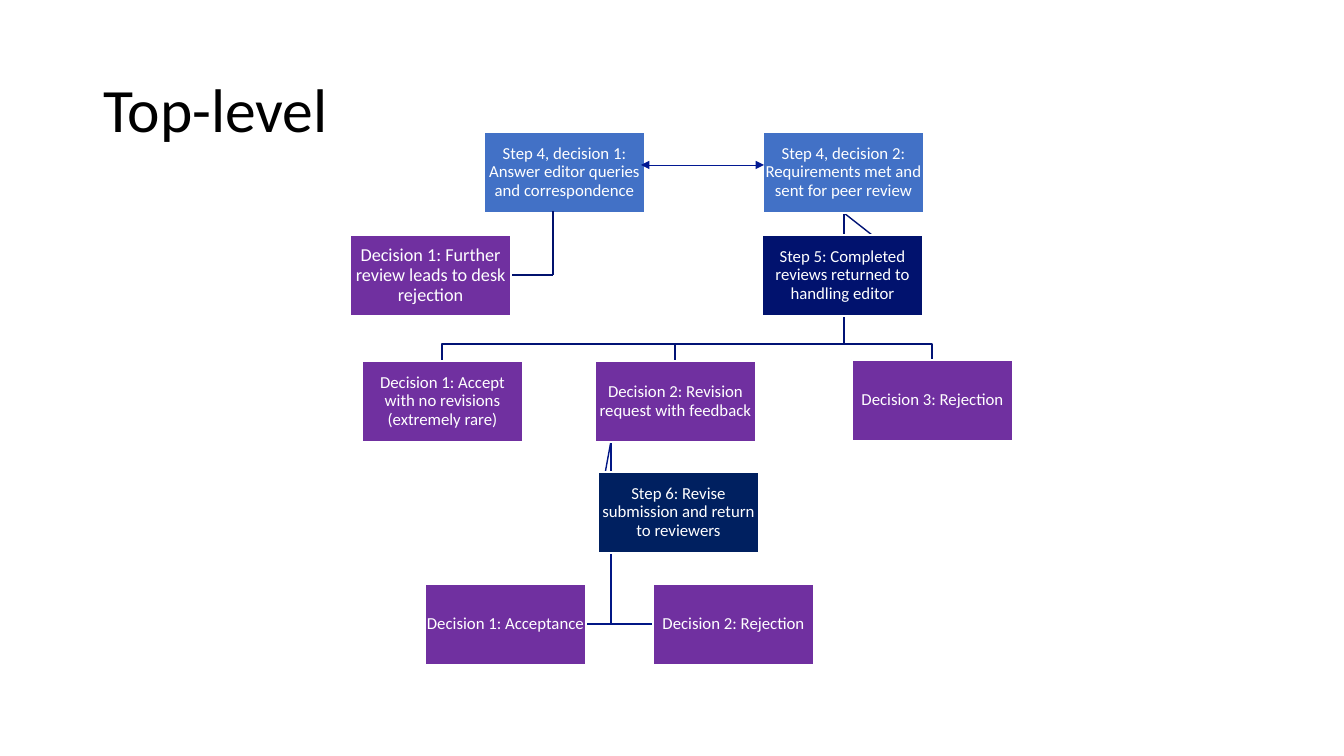
"""Build the top-level flowchart slide of editorial decisions."""
from lxml import etree
from pptx import Presentation
from pptx.dml.color import RGBColor
from pptx.enum.shapes import MSO_CONNECTOR, MSO_SHAPE
from pptx.enum.text import MSO_ANCHOR, PP_ALIGN
from pptx.oxml.ns import qn
from pptx.util import Pt

STRAIGHT, RECTANGLE = MSO_CONNECTOR.STRAIGHT, MSO_SHAPE.RECTANGLE
MIDDLE, LEFT, CENTER = MSO_ANCHOR.MIDDLE, PP_ALIGN.LEFT, PP_ALIGN.CENTER

EMU_PER_PX = 914400 / 100.8
SLIDE_SIZE = 1344, 756
BOX_SIZE = 161, 81
FONT = "Calibri"
BLUE, PURPLE, NAVY, MIDNIGHT = "4271C6", "7030A0", "01126E", "002060"
WHITE, BLACK = "FFFFFF", "000000"
REVIEW_LINE, REVISION_LINE, QUERY_LINE = "011375", "011685", "011892"

TITLE = "Top-level"
TITLE_FRAME = 93, 40, 1159, 146

REVIEW_START, REVIEW_BUS = (844, 213), 344
REVIEW_ENDS = [(675, 361), (442, 361), (932, 360)]
REVISION_START, REVISION_BUS = (611, 441), 624
REVISION_ENDS = [587, 653]
STEP_LINKS = [
    (REVIEW_START, (923, 275), REVIEW_LINE),
    (REVISION_START, (598, 512), REVISION_LINE),
]
DESK_LINKS = [
    ((553, 211), (553, 275), NAVY),
    ((453, 275), (553, 275), NAVY),
]
QUERY_LINK = (641, 165), (764, 165), QUERY_LINE

STEPS = [
    ("Step 4, decision 2: Requirements met and sent for peer review", 763, 132, BLUE),
    ("Decision 3: Rejection", 852, 360, PURPLE),
    ("Decision 1: Accept with no revisions (extremely rare)", 362, 361, PURPLE),
    ("Decision 2: Revision request with feedback", 595, 361, PURPLE),
    ("Step 6: Revise submission and return to reviewers", 598, 472, MIDNIGHT),
    ("Decision 2: Rejection", 653, 584, PURPLE),
    ("Decision 1: Acceptance", 425, 584, PURPLE),
    ("Step 5: Completed reviews returned to handling editor", 762, 235, NAVY),
    ("Step 4, decision 1: Answer editor queries and correspondence", 484, 132, BLUE),
]
DESK_REJECTION = "Decision 1: Further review leads to desk rejection", 350, 235, PURPLE


def emu(*lengths):
    return [round(length * EMU_PER_PX) for length in lengths]


def rgb(value):
    return RGBColor.from_string(value)


def apply(target, formats):
    for name, value in formats.items():
        setattr(target, name, value)


def write(frame, wording, size, color, align):
    apply(frame, {"text": wording, "word_wrap": True, "vertical_anchor": MIDDLE})
    paragraph = frame.paragraphs[0]
    apply(paragraph, {"alignment": align, "line_spacing": 0.9})
    font = paragraph.runs[0].font
    apply(font, {"name": FONT, "size": Pt(size), "bold": False})
    font.color.rgb = rgb(color)


def stroke(line, color, weight=1):
    line.color.rgb = rgb(color)
    line.width = Pt(weight)


def add_box(shapes, wording, left, top, fill, size=12):
    box = shapes.add_shape(RECTANGLE, *emu(left, top, *BOX_SIZE))
    box.shadow.inherit = False
    box.fill.solid()
    box.fill.fore_color.rgb = rgb(fill)
    stroke(box.line, WHITE)
    inset = emu(1)[0]
    sides = ("left", "right", "top", "bottom")
    apply(box.text_frame, {f"margin_{side}": inset for side in sides})
    write(box.text_frame, wording, size, WHITE, CENTER)


def add_branch(shapes, points, color):
    builder = shapes.build_freeform(*points[0], scale=EMU_PER_PX)
    builder.add_line_segments(points[1:], close=False)
    branch = builder.convert_to_shape()
    branch.shadow.inherit = False
    branch.fill.background()
    stroke(branch.line, color)


def add_link(shapes, start, end, color, weight=1, arrows=()):
    link = shapes.add_connector(STRAIGHT, *emu(*start, *end))
    stroke(link.line, color, weight)
    properties = link._element.spPr
    for arrow in arrows:
        etree.SubElement(properties.find(qn("a:ln")), qn(arrow), type="triangle")
    etree.SubElement(properties, qn("a:effectLst"))


def main():
    deck = Presentation()
    deck.slide_width, deck.slide_height = emu(*SLIDE_SIZE)
    shapes = deck.slides.add_slide(deck.slide_layouts[5]).shapes

    apply(shapes.title, dict(zip(("left", "top", "width", "height"), emu(*TITLE_FRAME))))
    write(shapes.title.text_frame, TITLE, 44, BLACK, LEFT)

    for link in STEP_LINKS:
        add_link(shapes, *link)
    for end in REVISION_ENDS:
        corner = REVISION_START[0], REVISION_BUS
        add_branch(shapes, [REVISION_START, corner, (end, REVISION_BUS)], REVISION_LINE)
    for end in REVIEW_ENDS:
        corners = [(x, REVIEW_BUS) for x in (REVIEW_START[0], end[0])]
        add_branch(shapes, [REVIEW_START, *corners, end], REVIEW_LINE)

    for step in STEPS:
        add_box(shapes, *step)
    for link in DESK_LINKS:
        add_link(shapes, *link)
    add_box(shapes, *DESK_REJECTION, size=13)
    add_link(shapes, *QUERY_LINK, weight=0.5, arrows=("a:headEnd", "a:tailEnd"))

    deck.save("out.pptx")


if __name__ == "__main__":
    main()
